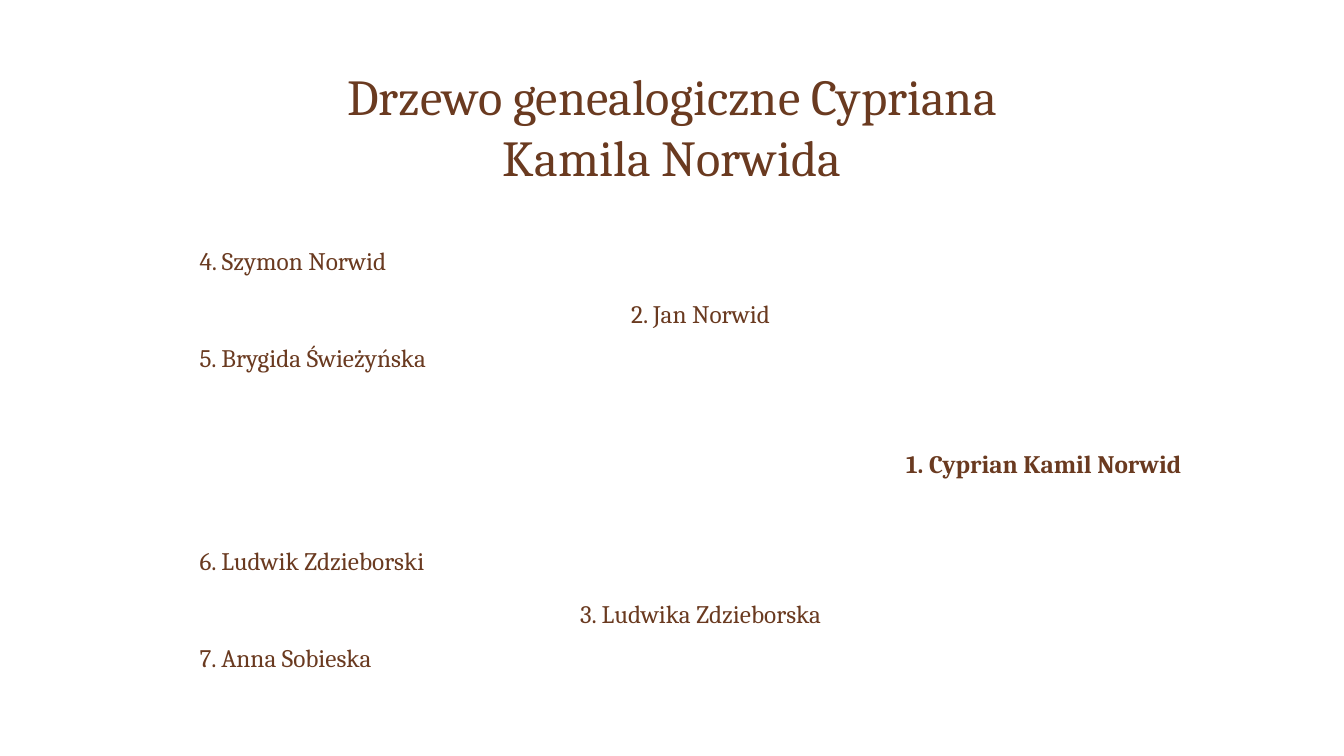
"""Builds a slide with the family tree of Cyprian Kamil Norwid."""
import pptx
import pptx.enum.text
import pptx.util
from pptx.dml.color import RGBColor
from pptx.util import Inches

COLORS = {"brown": "6A3A20"}
FONT = "Cambria"
ALIGN = pptx.enum.text.PP_ALIGN
ANCHOR = pptx.enum.text.MSO_ANCHOR

COLUMN_WIDTHS = [1.2, 0.23, 0.31, 3.06, 0.65, 2.72, 0.23, 0.23, 3.13, 0.24]
ROW_HEIGHTS = [0.48] * 4 + [1.06] + [0.48] * 3
GRANDPARENTS = {
    0: "4. Szymon Norwid",
    2: "5. Brygida Świeżyńska",
    5: "6. Ludwik Zdzieborski",
    7: "7. Anna Sobieska",
}
PARENTS = {1: "2. Jan Norwid", 6: "3. Ludwika Zdzieborska"}
POET = {3: "1. Cyprian Kamil Norwid"}


def write_text(tf, text, size=18, bold=False, align=ALIGN.LEFT):
    """Write one formatted run into a text frame."""
    p = tf.paragraphs[0]
    p.alignment = align
    r = p.add_run()
    r.text = text
    r.font.name = FONT
    r.font.size = pptx.util.Pt(size)
    r.font.bold = bold
    r.font.color.rgb = RGBColor.from_string(COLORS["brown"])


def add_title(s, text):
    """Add the centred slide title."""
    sp = s.shapes.add_textbox(Inches(2.67), Inches(0.6), Inches(7.99), Inches(1.31))
    sp.text_frame.word_wrap = True
    write_text(sp.text_frame, text, size=36, align=ALIGN.CENTER)


def add_grid(s):
    """Add the unfilled table that holds the tree."""
    table = s.shapes.add_table(
        len(ROW_HEIGHTS), len(COLUMN_WIDTHS), Inches(0.13), Inches(2.41),
        Inches(sum(COLUMN_WIDTHS)), Inches(sum(ROW_HEIGHTS))).table
    table.first_row = False
    table.horz_banding = False
    for column, width in zip(table.columns, COLUMN_WIDTHS):
        column.width = Inches(width)
    for row, height in zip(table.rows, ROW_HEIGHTS):
        row.height = Inches(height)
    for cell in table.iter_cells():
        cell.fill.background()
    table.cell(3, 8).merge(table.cell(4, 8))
    return table


def add_generation(table, column, people, anchor=ANCHOR.MIDDLE, **text_format):
    """Write the people of one generation into a table column."""
    for row, name in people.items():
        cell = table.cell(row, column)
        cell.vertical_anchor = anchor
        write_text(cell.text_frame, name, **text_format)


def main():
    """Build and save the slide."""
    prs = pptx.Presentation()
    prs.slide_width, prs.slide_height = Inches(13.33), Inches(7.5)
    s = prs.slides.add_slide(prs.slide_layouts[6])
    table = add_grid(s)
    add_generation(table, 3, GRANDPARENTS, anchor=ANCHOR.TOP)
    add_generation(table, 5, PARENTS, align=ALIGN.CENTER)
    add_generation(table, 8, POET, bold=True, align=ALIGN.CENTER)
    add_title(s, "Drzewo genealogiczne Cypriana Kamila Norwida")
    prs.save("out.pptx")


if __name__ == "__main__":
    main()
